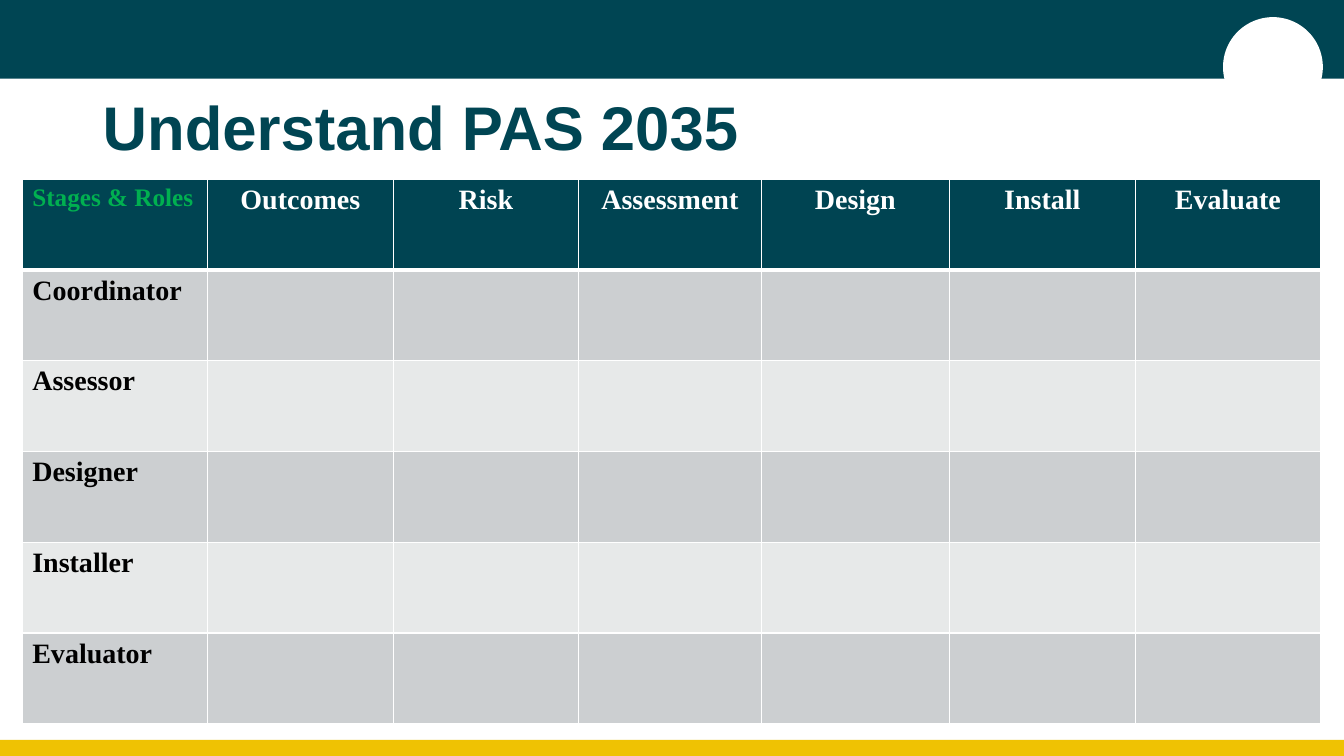
from lxml.etree import SubElement
from pptx import Presentation
from pptx.dml.color import RGBColor
from pptx.enum.shapes import MSO_SHAPE
from pptx.enum.text import MSO_ANCHOR, PP_ALIGN
from pptx.oxml.ns import qn
from pptx.util import Emu, Pt

PX = 9144  # 100 px to the inch
WIDE, HIGH = 1333, 750
HUES = {
    "teal": "004553", "head": "004452", "gold": "EFC203", "white": "FFFFFF",
    "green": "00B050", "black": "000000", "dark": "CCCFD1", "light": "E7E9E9",
}
STAGES = ["Outcomes", "Risk", "Assessment", "Design", "Install", "Evaluate"]
ROLES = ["Coordinator", "Assessor", "Designer", "Installer", "Evaluator"]
COLS = [184, 184, 184, 181, 187, 184, 184]
ROW = 90


def hue(name):
    return RGBColor.from_string(HUES[name])


def write(frame, text, font="Times New Roman", size=20, color="black",
          align=PP_ALIGN.LEFT, lead=None):
    para = frame.paragraphs[0]
    para.alignment = align
    para.line_spacing = lead
    run = para.add_run()
    run.text = text
    run.font.name = font
    run.font.size = Pt(size)
    run.font.bold = True
    run.font.color.rgb = hue(color)


class Deck:
    def __init__(self):
        self.show = Presentation()
        self.show.slide_width = Emu(WIDE * PX)
        self.show.slide_height = Emu(HIGH * PX)
        self.slide = self.show.slides.add_slide(self.show.slide_layouts[6])

    def box(self, *area):
        return [Emu(side * PX) for side in area]

    def shape(self, kind, area, color):
        item = self.slide.shapes.add_shape(kind, *self.box(*area))
        item.shadow.inherit = False
        item.fill.solid()
        item.fill.fore_color.rgb = hue(color)
        item.line.fill.background()

    def title(self, area, text):
        frame = self.slide.shapes.add_textbox(*self.box(*area)).text_frame
        frame.word_wrap = True
        frame.vertical_anchor = MSO_ANCHOR.MIDDLE
        write(frame, text, font="Arial", size=44, color="teal", lead=0.9)

    def edge(self, cell, **widths):
        """Give a cell white borders, with widths in points by side."""
        props = cell._tc.get_or_add_tcPr()
        for side in "LRTB":
            line = SubElement(props, qn(f"a:ln{side}"), w=str(Pt(widths.get(side, 1))))
            fill = SubElement(line, qn("a:solidFill"))
            SubElement(fill, qn("a:srgbClr"), val=HUES["white"])

    def table(self, left, top, cols, rows):
        area = self.box(left, top, sum(cols), ROW * len(rows))
        grid = self.slide.shapes.add_table(len(rows), len(cols), *area).table
        for col, wide in zip(grid.columns, cols):
            col.width = Emu(wide * PX)
        for r, texts in enumerate(rows):
            grid.rows[r].height = Emu(ROW * PX)
            shade = "head" if r == 0 else "dark" if r % 2 else "light"
            for c, text in enumerate(texts):
                cell = grid.cell(r, c)
                self.edge(cell, T=3 if r == 1 else 1, B=3 if r == 0 else 1)
                cell.fill.solid()
                cell.fill.fore_color.rgb = hue(shade)
                if not text:
                    continue
                if r:
                    write(cell.text_frame, text)
                elif c:
                    write(cell.text_frame, text, color="white", align=PP_ALIGN.CENTER)
                else:
                    write(cell.text_frame, text, size=18, color="green")


def main():
    deck = Deck()
    deck.shape(MSO_SHAPE.RECTANGLE, (0, 0, WIDE, 78), "teal")
    deck.shape(MSO_SHAPE.RECTANGLE, (0, 734, WIDE, 16), "gold")
    deck.shape(MSO_SHAPE.OVAL, (1213, 17, 99, 99), "white")
    deck.title((92, 80, 1150, 98), "Understand PAS 2035")
    blank = [""] * len(STAGES)
    rows = [["Stages & Roles", *STAGES]] + [[role, *blank] for role in ROLES]
    deck.table(22, 178, COLS, rows)
    deck.show.save("out.pptx")


if __name__ == "__main__":
    main()
